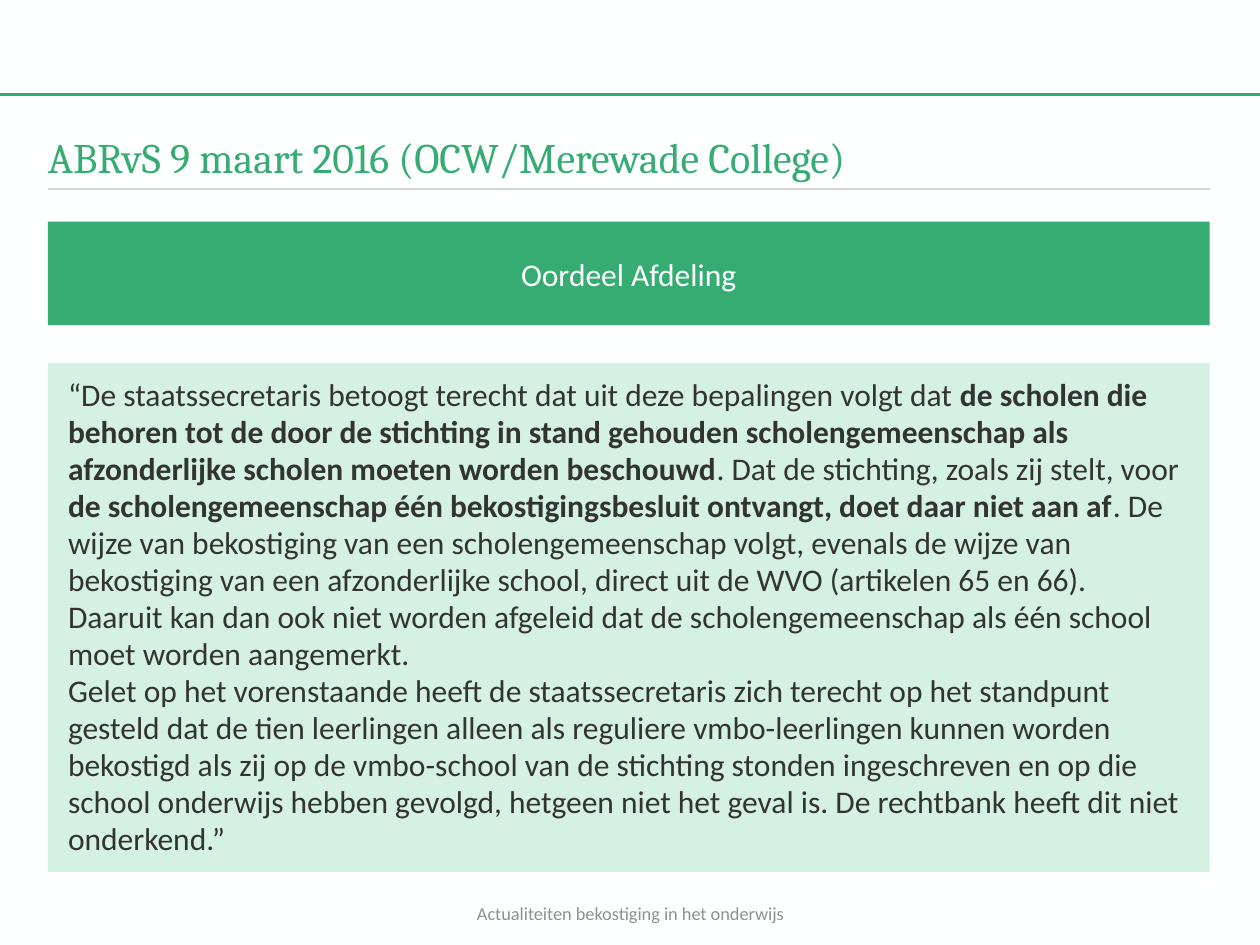
from lxml.etree import SubElement
from pptx import Presentation
from pptx.dml.color import RGBColor
from pptx.enum.shapes import MSO_CONNECTOR as CONNECTOR, MSO_SHAPE as SHAPE
from pptx.enum.text import MSO_ANCHOR as ANCHOR, PP_ALIGN as ALIGN
from pptx.oxml.ns import qn
from pptx.util import Inches, Pt

GREEN, PALE_GREEN, WHITE = "36AC73", "D4F1E3", "FEFFFF"
GREY, RULE_GREY, DARK = "909090", "D7D5D6", "333333"
LEFT, WIDTH = 0.38, 9.22

TITLE = "ABRvS 9 maart 2016 (OCW/Merewade College)"
HEADING = "Oordeel Afdeling"
FOOTER = "Actualiteiten bekostiging in het onderwijs"
JUDGMENT = [
    [
        ("“De staatssecretaris betoogt terecht dat uit deze bepalingen volgt dat ", False),
        ("de scholen die behoren tot de door de stichting in stand gehouden "
         "scholengemeenschap als afzonderlijke scholen moeten worden beschouwd", True),
        (". Dat de stichting, zoals zij stelt, voor ", False),
        ("de scholengemeenschap één bekostigingsbesluit ontvangt, doet daar niet aan af", True),
        (". De wijze van bekostiging van een scholengemeenschap volgt, evenals de wijze "
         "van bekostiging van een afzonderlijke school, direct uit de WVO (artikelen 65 "
         "en 66). Daaruit kan dan ook niet worden afgeleid dat de scholengemeenschap als "
         "één school moet worden aangemerkt.", False),
    ],
    [
        ("Gelet op het vorenstaande heeft de staatssecretaris zich terecht op het "
         "standpunt gesteld dat de tien leerlingen alleen als reguliere vmbo-leerlingen "
         "kunnen worden bekostigd als zij op de vmbo-school van de stichting stonden "
         "ingeschreven en op die school onderwijs hebben gevolgd, hetgeen niet het geval "
         "is. De rechtbank heeft dit niet onderkend.”", False),
    ],
]


def color(value):
    return RGBColor.from_string(value)


def write(shape, text, *, size, ink, font="Calibri", align=ALIGN.LEFT,
          anchor=ANCHOR.MIDDLE, inset=0, spacing=None):
    frame = shape.text_frame
    frame.word_wrap = True
    frame.vertical_anchor = anchor
    frame.margin_left = frame.margin_right = Inches(inset)
    frame.margin_top = frame.margin_bottom = 0
    paragraphs = [[(text, False)]] if isinstance(text, str) else text
    for index, runs in enumerate(paragraphs):
        paragraph = frame.add_paragraph() if index else frame.paragraphs[0]
        paragraph.alignment = align
        paragraph.line_spacing = spacing
        for words, bold in runs:
            run = paragraph.add_run()
            run.text = words
            run.font.name = font
            run.font.size = Pt(size)
            run.font.bold = bold
            run.font.color.rgb = color(ink)


def add_rule(slide, left, top, width, ink, weight):
    rule = slide.shapes.add_connector(
        CONNECTOR.STRAIGHT, Inches(left), Inches(top), Inches(left + width), Inches(top))
    rule.line.color.rgb = color(ink)
    rule.line.width = Pt(weight)
    SubElement(rule._element.spPr, qn("a:effectLst"))


def add_label(slide, box, text, **style):
    label = slide.shapes.add_textbox(*map(Inches, box))
    write(label, text, **style)


def add_panel(slide, box, fill, text, **style):
    panel = slide.shapes.add_shape(SHAPE.RECTANGLE, *map(Inches, box))
    panel.shadow.inherit = False
    panel.fill.solid()
    panel.fill.fore_color.rgb = color(fill)
    panel.line.fill.background()
    write(panel, text, size=18, inset=0.16, **style)


def add_header(slide, left, top, width):
    add_rule(slide, 0, top, 10, GREEN, 1.5)
    add_rule(slide, left, top + 0.75, width, RULE_GREY, 1)
    add_label(slide, (left, top + 0.29, width, 0.4), TITLE,
              size=24, ink=GREEN, font="Cambria", anchor=ANCHOR.TOP)


def add_ruling(slide, left, top, width):
    add_panel(slide, (left, top, width, 0.82), GREEN, HEADING,
              ink=WHITE, align=ALIGN.CENTER)
    add_panel(slide, (left, top + 1.12, width, 4.04), PALE_GREEN, JUDGMENT,
              ink=DARK, spacing=0.98)


def main():
    deck = Presentation()
    deck.slide_width, deck.slide_height = Inches(10), Inches(7.5)
    slide = deck.slides.add_slide(deck.slide_layouts[6])
    slide.background.fill.solid()
    slide.background.fill.fore_color.rgb = color(WHITE)
    add_header(slide, LEFT, 0.75, WIDTH)
    add_ruling(slide, LEFT, 1.76, WIDTH)
    add_label(slide, (3.42, 7.16, 3.17, 0.18), FOOTER,
              size=10.5, ink=GREY, align=ALIGN.CENTER)
    deck.save("out.pptx")


if __name__ == "__main__":
    main()
